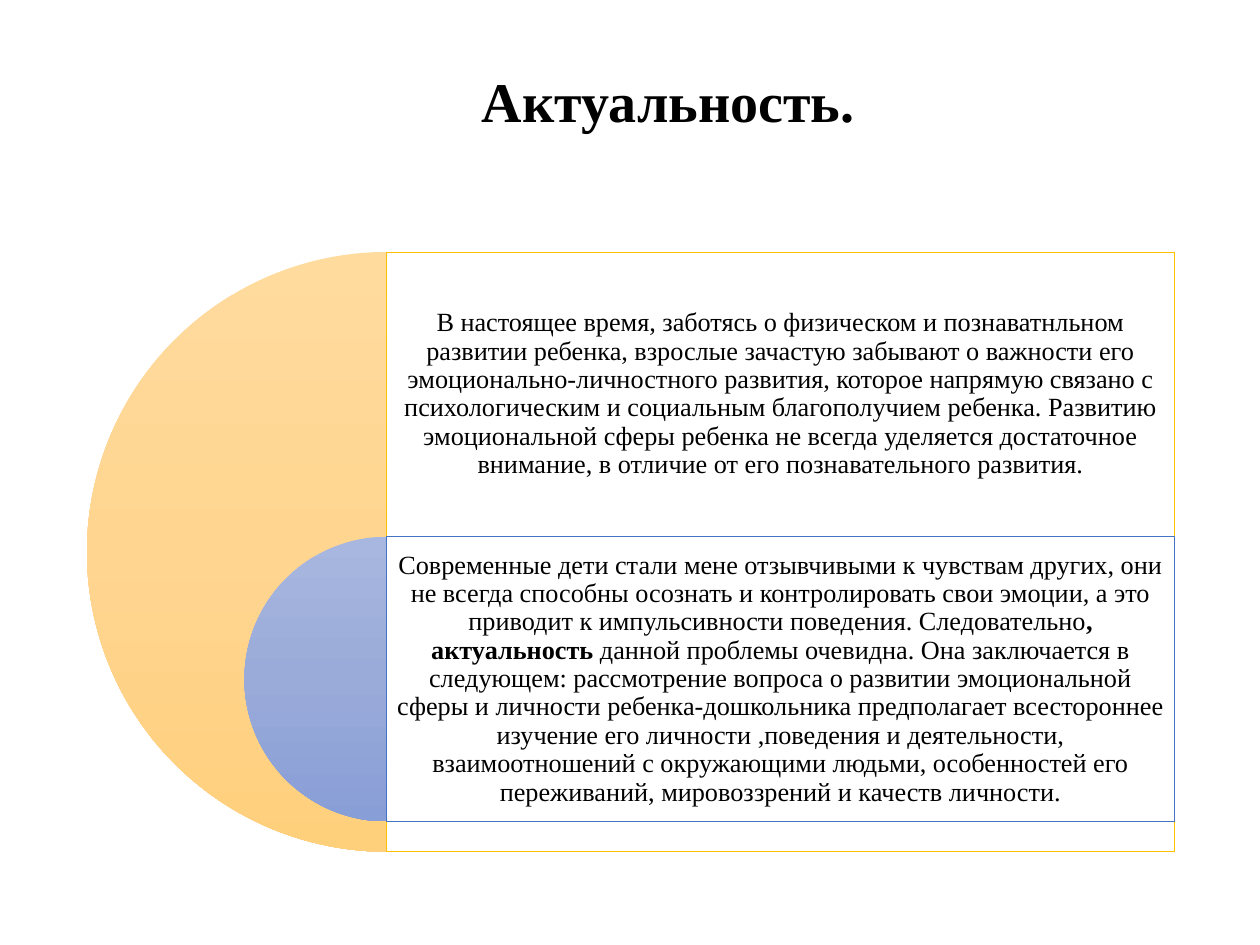
from copy import deepcopy

from lxml import etree
from pptx import Presentation
from pptx.dml.color import RGBColor
from pptx.enum.shapes import MSO_SHAPE
from pptx.enum.text import MSO_ANCHOR, PP_ALIGN
from pptx.oxml import parse_xml
from pptx.oxml.ns import nsdecls, qn
from pptx.util import Inches, Pt

PIE = MSO_SHAPE.PIE
RECTANGLE = MSO_SHAPE.RECTANGLE
MIDDLE = MSO_ANCHOR.MIDDLE
CENTER = PP_ALIGN.CENTER

BLACK = RGBColor(0x00, 0x00, 0x00)
WHITE = RGBColor(0xFF, 0xFF, 0xFF)
GOLD = RGBColor(0xFF, 0xC0, 0x00)
BLUE = RGBColor(0x44, 0x72, 0xC4)
GOLD_SHADES = (RGBColor(0xFF, 0xDB, 0x9E), RGBColor(0xFF, 0xD5, 0x90), RGBColor(0xFF, 0xD0, 0x7C))
BLUE_SHADES = (RGBColor(0xA8, 0xB7, 0xDF), RGBColor(0x9A, 0xAB, 0xD9), RGBColor(0x88, 0x9E, 0xD7))

AXIS, TOP, PANEL_WIDTH = 3.07, 2, 6.25
OUTER, INNER = 4.76, 2.26

CONTEXT = [
    ("В настоящее время, заботясь о физическом и познаватнльном развитии ребенка, "
     "взрослые зачастую забывают о важности его эмоционально-личностного развития, "
     "которое напрямую связано с психологическим и социальным благополучием ребенка. "
     "Развитию эмоциональной сферы ребенка не всегда уделяется достаточное внимание, "
     "в отличие от его познавательного развития.", False),
]
RELEVANCE = [
    ("Современные дети стали мене отзывчивыми к чувствам других, они не всегда "
     "способны осознать и контролировать свои эмоции, а это приводит к импульсивности "
     "поведения. Следовательно", False),
    (", актуальность", True),
    (" данной проблемы очевидна. Она заключается в следующем: рассмотрение вопроса о "
     "развитии эмоциональной сферы и личности ребенка-дошкольника предполагает "
     "всестороннее изучение его личности ,поведения и деятельности, взаимоотношений с "
     "окружающими людьми, особенностей его переживаний, мировоззрений и качеств "
     "личности.", False),
]


class SlideBuilder:
    font_name = "Times New Roman"

    def __init__(self, slide):
        self.slide = slide

    def shape(self, kind, left, top, width, height):
        shape = self.slide.shapes.add_shape(
            kind, Inches(left), Inches(top), Inches(width), Inches(height))
        shape.shadow.inherit = False
        return shape

    def half_disc(self, top, diameter, shades):
        disc = self.shape(PIE, AXIS - diameter / 2, top, diameter, diameter)
        disc.adjustments[0] = 54
        disc.adjustments[1] = 162
        disc.line.fill.background()
        disc.fill.gradient()
        disc.fill.gradient_angle = 270
        stop_list = disc._element.spPr.find(qn("a:gradFill")).find(qn("a:gsLst"))
        stop_list.insert(1, deepcopy(stop_list[0]))
        for stop, position, shade in zip(disc.fill.gradient_stops, (0, 0.5, 1), shades):
            stop.position = position
            stop.color.rgb = shade

    def panel(self, top, height, color):
        panel = self.shape(RECTANGLE, AXIS, top, PANEL_WIDTH, height)
        panel.fill.solid()
        panel.fill.fore_color.rgb = WHITE
        fill_color = panel._element.spPr.find(qn("a:solidFill"))[0]
        etree.SubElement(fill_color, qn("a:alpha"), val="90000")
        panel.line.color.rgb = color
        panel.line.width = Pt(0.5)

    def text(self, left, top, width, height, spans, size, inset):
        box = self.slide.shapes.add_textbox(
            Inches(left), Inches(top), Inches(width), Inches(height))
        frame = box.text_frame
        frame_format = {"word_wrap": True, "vertical_anchor": MIDDLE}
        for side in ("left", "top", "right", "bottom"):
            frame_format[f"margin_{side}"] = Inches(inset)
        for name, value in frame_format.items():
            setattr(frame, name, value)
        para = frame.paragraphs[0]
        para.alignment = CENTER
        para.line_spacing = 0.9
        for words, bold in spans:
            span = para.add_run()
            span.text = words
            font_format = {"name": self.font_name, "size": Pt(size), "bold": bold}
            for name, value in font_format.items():
                setattr(span.font, name, value)
            span.font.color.rgb = BLACK
        return para

    def title(self, left, top, width, height, words):
        para = self.text(left, top, width, height, [(words, True)], 32, 0.05)
        fill = para.runs[0].font._element.find(qn("a:solidFill"))
        fill.addnext(parse_xml(
            f'<a:effectLst {nsdecls("a")}>'
            '<a:outerShdw blurRad="38100" dist="38100" dir="5400000" algn="t">'
            '<a:srgbClr val="000000"><a:alpha val="40000"/></a:srgbClr>'
            '</a:outerShdw></a:effectLst>'))

    def section(self, top, diameter, shades, color, spans):
        self.half_disc(top, diameter, shades)
        self.panel(top, diameter, color)
        self.text(AXIS, top, PANEL_WIDTH, INNER, spans, 15, 0.06)


def main():
    deck = Presentation()
    deck.slide_width = Inches(10)
    deck.slide_height = Inches(7.5)
    page = SlideBuilder(deck.slides.add_slide(deck.slide_layouts[6]))
    page.title(2.56, 0.44, 5.49, 0.78, "Актуальность.")
    page.section(TOP, OUTER, GOLD_SHADES, GOLD, CONTEXT)
    page.section(TOP + INNER, INNER, BLUE_SHADES, BLUE, RELEVANCE)
    deck.save("out.pptx")


if __name__ == "__main__":
    main()
